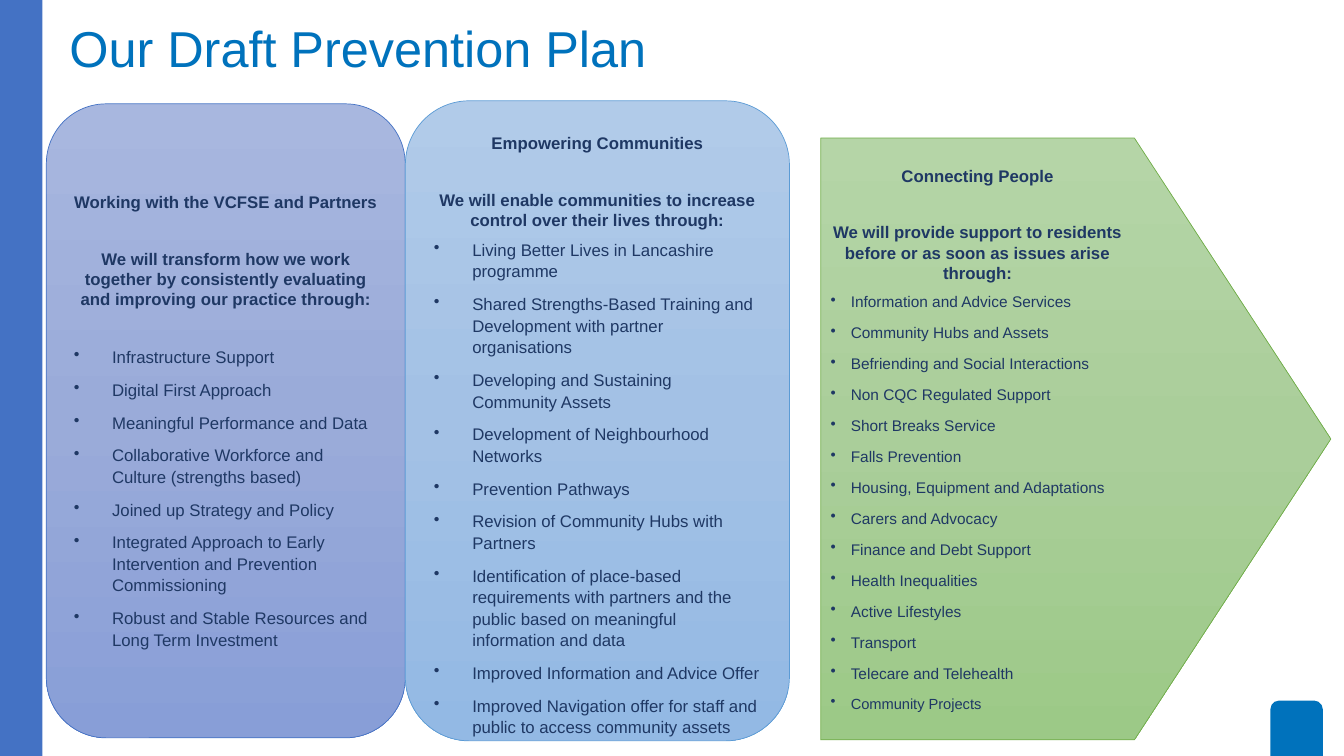
import copy

import lxml.etree
import pptx
import pptx.dml.color
import pptx.enum.shapes
import pptx.enum.text
import pptx.oxml.ns
import pptx.util

Inches = pptx.util.Inches
Pt = pptx.util.Pt
RGB = pptx.dml.color.RGBColor
Shape = pptx.enum.shapes.MSO_SHAPE
Align = pptx.enum.text.PP_ALIGN
qn = pptx.oxml.ns.qn

BRIGHT_BLUE = RGB(0x00, 0x72, 0xBC)
BAND_BLUE = RGB(0x44, 0x72, 0xC4)
SKY_BLUE = RGB(0x5B, 0x9B, 0xD5)
GREEN = RGB(0x70, 0xAD, 0x47)
NAVY = RGB(0x1F, 0x38, 0x64)
INDIGO_FADE = (RGB(0xA8, 0xB7, 0xDF), RGB(0x9A, 0xAB, 0xD9), RGB(0x88, 0x9E, 0xD7))
SKY_FADE = (RGB(0xB1, 0xCB, 0xE9), RGB(0xA3, 0xC1, 0xE5), RGB(0x93, 0xB9, 0xE4))
GREEN_FADE = (RGB(0xB5, 0xD5, 0xA7), RGB(0xAA, 0xCE, 0x9A), RGB(0x9C, 0xC9, 0x87))

GAP = 6
WIDE_GAP = 26

PARTNERS = [
    "Infrastructure Support",
    "Digital First Approach",
    "Meaningful Performance and Data",
    "Collaborative Workforce and Culture (strengths based)",
    "Joined up Strategy and Policy",
    "Integrated Approach to Early Intervention and Prevention Commissioning",
    "Robust and Stable Resources and Long Term Investment",
]
COMMUNITIES = [
    "Living Better Lives in Lancashire programme",
    "Shared Strengths-Based Training and Development with partner organisations",
    "Developing and Sustaining Community Assets",
    "Development of Neighbourhood Networks",
    "Prevention Pathways",
    "Revision of Community Hubs with Partners",
    "Identification of place-based requirements with partners and the public "
    "based on meaningful information and data",
    "Improved Information and Advice Offer",
    "Improved Navigation offer for staff and public to access community assets",
]
PEOPLE = [
    "Information and Advice Services",
    "Community Hubs and Assets",
    "Befriending and Social Interactions",
    "Non CQC Regulated Support",
    "Short Breaks Service",
    "Falls Prevention",
    "Housing, Equipment and Adaptations",
    "Carers and Advocacy",
    "Finance and Debt Support",
    "Health Inequalities",
    "Active Lifestyles",
    "Transport",
    "Telecare and Telehealth",
    "Community Projects",
]


def apply(target, values):
    for name, value in values.items():
        setattr(target, name, value)


class PlanSlide:
    def __init__(self, slide, font_name):
        self.shapes = slide.shapes
        self.font_name = font_name

    def block(self, kind, box, color=None):
        shape = self.shapes.add_shape(kind, *map(Inches, box))
        shape.shadow.inherit = False
        if color is not None:
            shape.fill.solid()
            shape.fill.fore_color.rgb = color
            shape.line.fill.background()
        return shape

    def fade(self, shape, colors):
        """Fill a shape from top to bottom with three evenly spaced colours."""
        shape.fill.gradient()
        shape.fill.gradient_angle = 270
        first = next(shape.element.iter(qn("a:gs")))
        first.addnext(copy.deepcopy(first))
        for index, (stop, color) in enumerate(zip(shape.fill.gradient_stops, colors)):
            stop.position = index / 2
            stop.color.rgb = color

    def add_text(self, paragraph, text, color, font, layout):
        apply(paragraph, layout)
        run = paragraph.add_run()
        run.text = text
        apply(run.font, {"name": self.font_name, **font})
        run.font.color.rgb = color

    def bullet(self, paragraph, indent):
        properties = paragraph._p.get_or_add_pPr()
        properties.set("marL", str(Inches(indent)))
        properties.set("indent", str(-Inches(indent)))
        lxml.etree.SubElement(properties, qn("a:buChar")).set("char", "•")

    def title(self, text, box):
        frame = self.shapes.add_textbox(*map(Inches, box)).text_frame
        apply(frame, {"word_wrap": True,
                      "vertical_anchor": pptx.enum.text.MSO_ANCHOR.MIDDLE})
        self.add_text(frame.paragraphs[0], text, BRIGHT_BLUE,
                      {"size": Pt(36)}, {"line_spacing": 0.9})

    def panel(self, kind, box, colors, outline, heading, lead, items, lead_gap=GAP,
              indent=0.38, size=12, last_size=12, align=Align.LEFT, top=0.05):
        shape = self.block(kind, box)
        self.fade(shape, colors)
        shape.line.color.rgb = outline
        shape.line.width = Pt(0.5)
        frame = shape.text_frame
        apply(frame, {"word_wrap": True, "margin_top": Inches(top),
                      "vertical_anchor": pptx.enum.text.MSO_ANCHOR.MIDDLE})
        for index, (text, gap) in enumerate([(heading, WIDE_GAP), (lead, lead_gap)]):
            paragraph = frame.add_paragraph() if index else frame.paragraphs[0]
            self.add_text(paragraph, text, NAVY, {"size": Pt(12), "bold": True},
                          {"alignment": Align.CENTER, "space_after": Pt(gap)})
        for item in items:
            paragraph = frame.add_paragraph()
            self.bullet(paragraph, indent)
            points = last_size if item == items[-1] else size
            self.add_text(paragraph, item, NAVY, {"size": Pt(points), "bold": False},
                          {"alignment": align, "line_spacing": 1.07, "space_after": Pt(8)})
        return shape


def main():
    deck = pptx.Presentation()
    apply(deck, {"slide_width": Inches(13.33), "slide_height": Inches(7.5)})
    plan = PlanSlide(deck.slides.add_slide(deck.slide_layouts[6]), "Arial")

    plan.block(Shape.ROUNDED_RECTANGLE, (12.6, 6.95, 0.52, 0.75), BRIGHT_BLUE)
    plan.block(Shape.RECTANGLE, (-0.07, -0.08, 0.49, 7.84), BAND_BLUE)
    plan.title("Our Draft Prevention Plan", (0.59, -0.22, 11.5, 1.45))

    plan.panel(
        Shape.ROUNDED_RECTANGLE, (0.46, 1.03, 3.56, 6.29), INDIGO_FADE, BAND_BLUE,
        "Working with the VCFSE and Partners",
        "We will transform how we work together by consistently evaluating "
        "and improving our practice through:",
        PARTNERS, lead_gap=WIDE_GAP)
    plan.panel(
        Shape.ROUNDED_RECTANGLE, (4.02, 1, 3.81, 6.35), SKY_FADE, SKY_BLUE,
        "Empowering Communities",
        "We will enable communities to increase control over their lives through:",
        COMMUNITIES, top=0.33)
    people = plan.panel(
        Shape.RIGHT_ARROW, (8.14, 1.37, 5.06, 5.97), GREEN_FADE, GREEN,
        "Connecting People",
        "We will provide support to residents before or as soon as issues arise through:",
        PEOPLE, indent=0.2, size=11, last_size=10.5, align=Align.JUSTIFY)
    people.adjustments[0] = 1
    people.adjustments[1] = 0.385

    deck.save("out.pptx")


if __name__ == "__main__":
    main()
